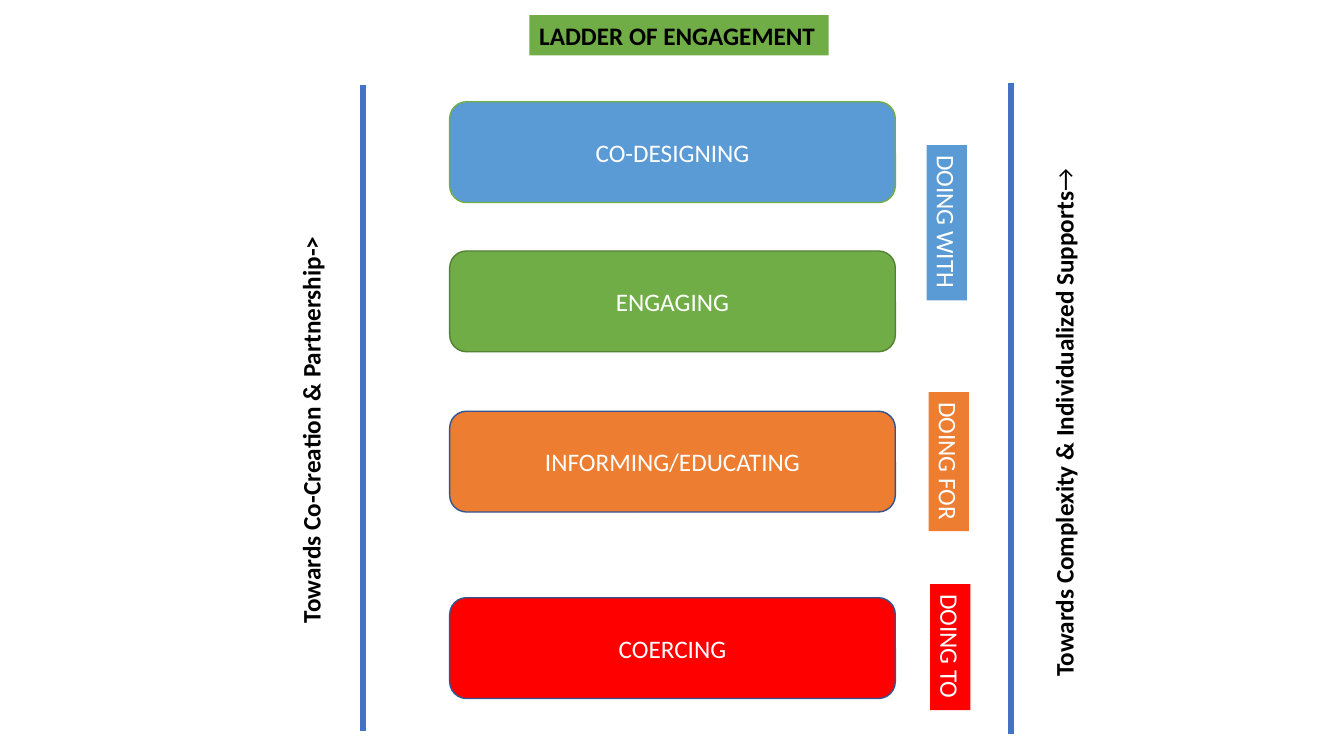
from dataclasses import dataclass

from lxml.etree import SubElement
from pptx import Presentation
from pptx.dml.color import RGBColor
from pptx.enum.shapes import MSO_CONNECTOR as Connector
from pptx.enum.shapes import MSO_SHAPE as Shape
from pptx.enum.text import MSO_ANCHOR as Anchor
from pptx.enum.text import MSO_AUTO_SIZE as AutoSize
from pptx.enum.text import PP_ALIGN as Align
from pptx.oxml.ns import qn
from pptx.slide import Slide
from pptx.text.text import TextFrame
from pptx.util import Inches, Pt

BLACK = RGBColor(0x00, 0x00, 0x00)
WHITE = RGBColor(0xFF, 0xFF, 0xFF)
BLUE = RGBColor(0x5B, 0x9B, 0xD5)
GREEN = RGBColor(0x70, 0xAD, 0x47)
DARK_GREEN = RGBColor(0x54, 0x82, 0x35)
ORANGE = RGBColor(0xED, 0x7D, 0x31)
RED = RGBColor(0xFF, 0x00, 0x00)
NAVY = RGBColor(0x32, 0x54, 0x91)
RAIL_BLUE = RGBColor(0x44, 0x72, 0xC4)

RUNG_LEFT, RUNG_WIDTH, RUNG_HEIGHT = 4.46, 4.42, 1.0
LABEL_HEIGHT = 0.4


@dataclass
class Rung:
    text: str
    top: float
    fill: RGBColor
    outline: RGBColor


@dataclass
class Label:
    """A one-line text box, placed by its unrotated frame."""
    words: list[str]
    left: float
    top: float
    width: float
    height: float = LABEL_HEIGHT
    rotation: int = 0
    fill: RGBColor | None = None
    color: RGBColor = BLACK
    wrap: bool = False


@dataclass
class Rail:
    x: float
    top: float
    bottom: float


RUNGS = [
    Rung("CO-DESIGNING", 1.01, BLUE, GREEN),
    Rung("ENGAGING", 2.49, GREEN, DARK_GREEN),
    Rung("INFORMING/EDUCATING", 4.08, ORANGE, NAVY),
    Rung("COERCING", 5.93, RED, NAVY),
]
LABELS = [
    Label(["LADDER OF ENGAGEMENT"], 5.25, 0.15, 2.97, fill=GREEN),
    Label(["DOING WITH"], 8.62, 2.01, 1.54, rotation=90, fill=BLUE, color=WHITE),
    Label(["DOING FOR"], 8.72, 4.38, 1.38, rotation=90, fill=ORANGE, color=WHITE),
    Label(["DOING TO"], 8.8, 6.22, 1.25, rotation=90, fill=RED, color=WHITE),
    Label(["Towards Co-Creation & Partnership->"], 1.06, 3.75, 4.35, 0.71,
          rotation=270, wrap=True),
    Label(["Towards Complexity & Individualized Supports", "→"],
          7.92, 3.98, 5.26, rotation=270),
]
RAILS = [Rail(3.6, 0.84, 7.25), Rail(10.03, 0.82, 7.28)]


def write_text(frame: TextFrame, words: list[str], color: RGBColor, bold: bool) -> None:
    """Write each item as a run; only the first can be bold."""
    paragraph = frame.paragraphs[0]
    for index, text in enumerate(words):
        run = paragraph.add_run()
        run.text = text
        run.font.name = "Calibri"
        run.font.size = Pt(18)
        run.font.bold = bold and index == 0
        run.font.color.rgb = color


def add_rung(slide: Slide, rung: Rung) -> None:
    shape = slide.shapes.add_shape(
        Shape.ROUNDED_RECTANGLE, Inches(RUNG_LEFT), Inches(rung.top),
        Inches(RUNG_WIDTH), Inches(RUNG_HEIGHT))
    shape.shadow.inherit = False
    shape.fill.solid()
    shape.fill.fore_color.rgb = rung.fill
    shape.line.color.rgb = rung.outline
    shape.line.width = Pt(1)
    frame = shape.text_frame
    frame.vertical_anchor = Anchor.MIDDLE
    write_text(frame, [rung.text], WHITE, bold=False)
    frame.paragraphs[0].alignment = Align.CENTER


def add_label(slide: Slide, label: Label) -> None:
    box = slide.shapes.add_textbox(
        Inches(label.left), Inches(label.top), Inches(label.width), Inches(label.height))
    box.rotation = label.rotation
    if label.fill is not None:
        box.fill.solid()
        box.fill.fore_color.rgb = label.fill
    frame = box.text_frame
    frame.word_wrap = label.wrap
    frame.auto_size = AutoSize.SHAPE_TO_FIT_TEXT
    write_text(frame, label.words, label.color, bold=label.color == BLACK)


def add_rail(slide: Slide, rail: Rail) -> None:
    line = slide.shapes.add_connector(
        Connector.STRAIGHT, Inches(rail.x), Inches(rail.top),
        Inches(rail.x), Inches(rail.bottom))
    line.line.color.rgb = RAIL_BLUE
    line.line.width = Pt(4.5)
    SubElement(line._element.spPr, qn("a:effectLst"))


def main() -> None:
    presentation = Presentation()
    presentation.slide_width = Inches(13.33)
    presentation.slide_height = Inches(7.5)
    slide = presentation.slides.add_slide(presentation.slide_layouts[6])

    # Ladder rungs
    for rung in RUNGS:
        add_rung(slide, rung)

    # Title, side tags and direction captions
    for label in LABELS:
        add_label(slide, label)

    # Side rails
    for rail in RAILS:
        add_rail(slide, rail)

    presentation.save("out.pptx")


if __name__ == "__main__":
    main()
